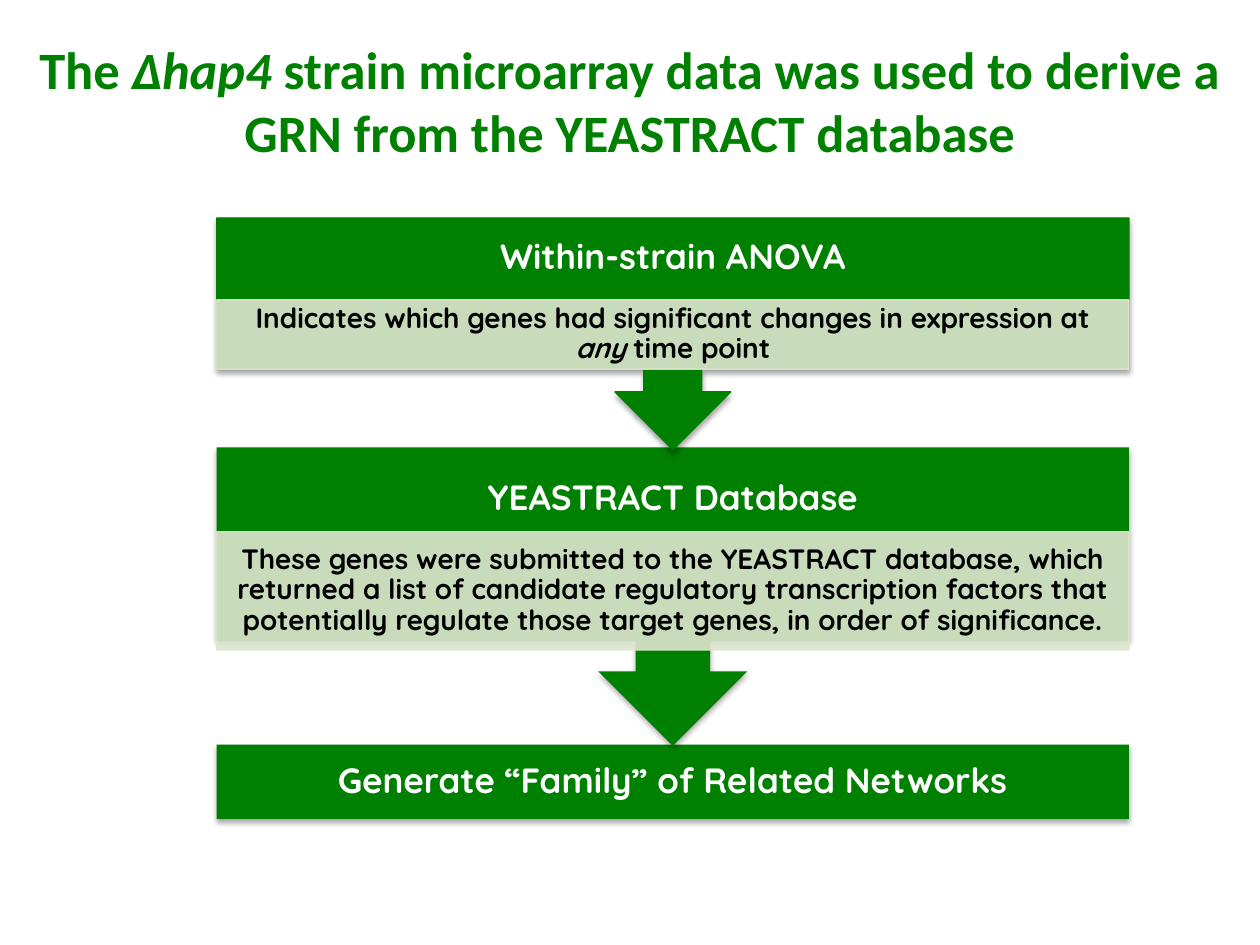
from lxml.etree import SubElement
from pptx import Presentation
from pptx.dml.color import RGBColor
from pptx.enum.shapes import MSO_SHAPE
from pptx.enum.text import MSO_ANCHOR, PP_ALIGN
from pptx.oxml.ns import qn
from pptx.util import Inches, Pt

GREEN, PALE, WHITE, BLACK = "008000", "DEE7D1", "FFFFFF", "000000"
LEFT, WIDE = 1.72, 7.24
TITLE = [("The ", False), ("Δhap4", True),
         (" strain microarray data was used to derive a GRN from the YEASTRACT database", False)]
STEPS = [
    {"head": "Generate “Family” of Related Networks", "top": 5.91, "high": 0.59, "band": 0.59},
    {"head": "YEASTRACT Database", "top": 3.55, "high": 2.37, "band": 0.83,
     "note": (4.22, 0.94, [("These genes were submitted to the YEASTRACT database, which returned "
                            "a list of candidate regulatory transcription factors that potentially "
                            "regulate those target genes, in order of significance.", False)])},
    {"head": "Within-strain ANOVA", "top": 1.73, "high": 1.84, "band": 0.64, "edge": True,
     "note": (2.38, 0.55, [("Indicates which genes had significant changes in expression at ", False),
                           ("any", True), (" time point", False)])},
]


def paint(fill, color, alpha=100):
    """Give a fill a solid colour with an opacity in percent."""
    fill.solid()
    fill.fore_color.rgb = RGBColor.from_string(color)
    if alpha < 100:
        tone = fill._xPr.find(qn("a:solidFill"))[0]
        SubElement(tone, qn("a:alpha"), val=str(alpha * 1000))


def block(slide, kind, top, high, color, alpha=100, edge=False):
    """Draw one full-width shape of the flow."""
    shape = slide.shapes.add_shape(kind, Inches(LEFT), Inches(top), Inches(WIDE), Inches(high))
    shape.shadow.inherit = False
    paint(shape.fill, color, alpha)
    if edge:
        shape.line.width = Pt(0.75)
        paint(shape.line.fill, color, alpha)
    else:
        shape.line.fill.background()
    return shape


def shade(shape):
    """Cast a soft shadow straight down."""
    effect = shape._element.spPr.find(qn("a:effectLst"))
    outer = SubElement(effect, qn("a:outerShdw"), blurRad=str(Pt(3.1)), dist=str(Pt(1.8)),
                       dir="5400000", rotWithShape="0")
    tone = SubElement(outer, qn("a:srgbClr"), val=BLACK)
    SubElement(tone, qn("a:alpha"), val="35000")


def write(slide, spot, runs, size, color, font="Quicksand", pads=(0.16, 0.16), lead=0.9):
    """Place centred bold text in a box."""
    frame = slide.shapes.add_textbox(*map(Inches, spot)).text_frame
    frame.word_wrap = True
    frame.vertical_anchor = MSO_ANCHOR.MIDDLE
    frame.margin_left = frame.margin_right = Inches(pads[0])
    frame.margin_top = frame.margin_bottom = Inches(pads[1])
    para = frame.paragraphs[0]
    para.alignment = PP_ALIGN.CENTER
    para.line_spacing = lead
    for text, slant in runs:
        run = para.add_run()
        run.text = text
        run.font.name, run.font.size = font, Pt(size)
        run.font.bold, run.font.italic = True, slant
        run.font.color.rgb = RGBColor.from_string(color)


def main():
    """Build the slide and save it."""
    deck = Presentation()
    deck.slide_width, deck.slide_height = Inches(10), Inches(7.5)
    slide = deck.slides.add_slide(deck.slide_layouts[6])
    write(slide, (0, 0.17, 10, 1.25), TITLE, 30, GREEN, "Calibri", (0.1, 0.05), 1.0)
    for step in STEPS:
        note = step.get("note")
        kind = MSO_SHAPE.UP_ARROW_CALLOUT if note else MSO_SHAPE.RECTANGLE
        shape = block(slide, kind, step["top"], step["high"], GREEN, edge=step.get("edge", False))
        shape.rotation = 180 if note else 0
        shade(shape)
        write(slide, (LEFT, step["top"], WIDE, step["band"]), [(step["head"], False)], 20, WHITE)
        if note:
            top, high, runs = note
            block(slide, MSO_SHAPE.RECTANGLE, top, high, PALE, 90, True)
            write(slide, (LEFT, top, WIDE, high), runs, 16, BLACK, pads=(0.12, 0.02))
    deck.save("out.pptx")


if __name__ == "__main__":
    main()
